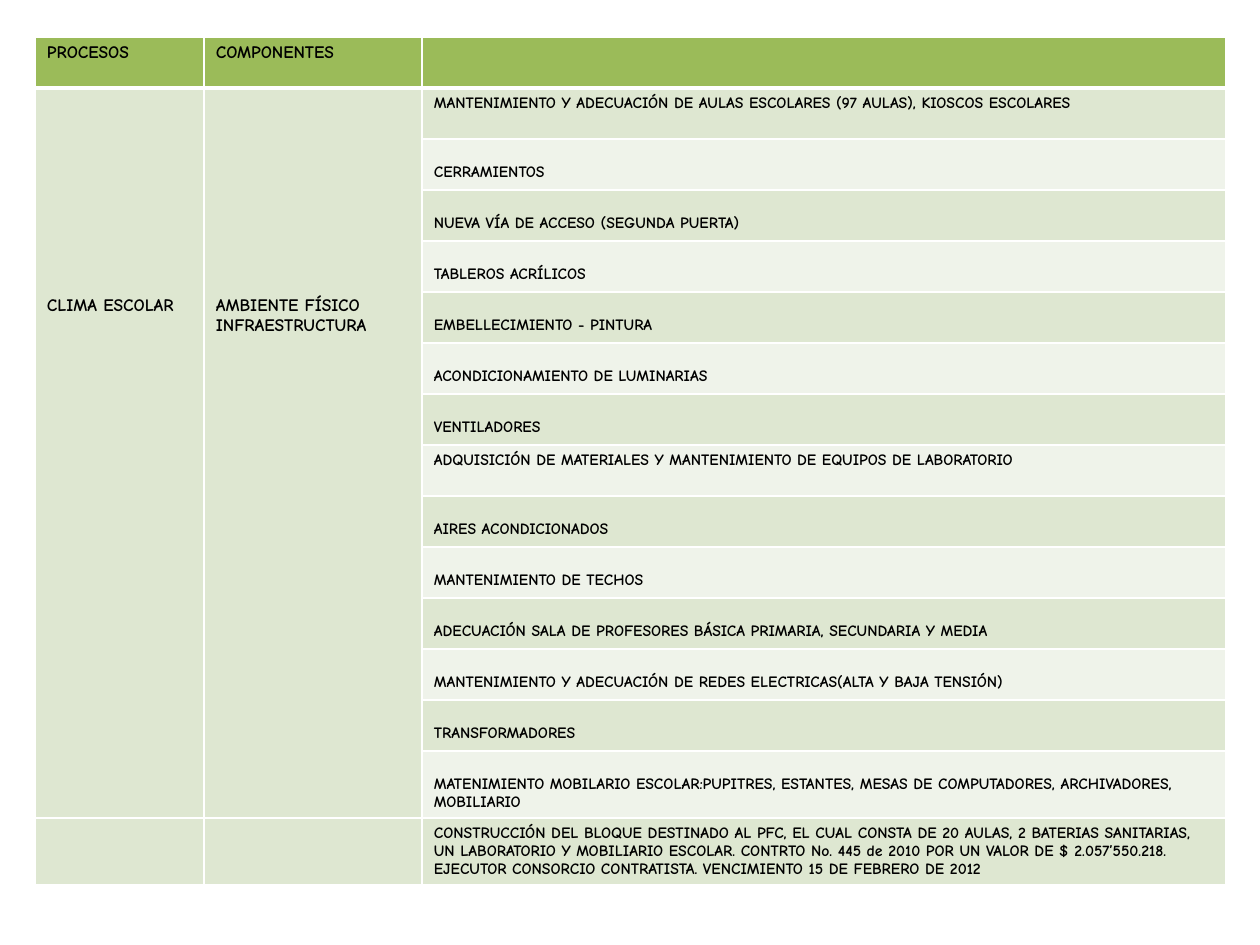
from itertools import cycle

from lxml.etree import SubElement
from pptx import Presentation
from pptx.dml.color import RGBColor
from pptx.oxml.ns import qn
from pptx.util import Emu, Pt

EMU_PER_PX = 914400 // 126
HEADER_GREEN = RGBColor(0x9B, 0xBB, 0x59)
BAND_GREEN = RGBColor(0xDE, 0xE7, 0xD1)
BAND_PALE = RGBColor(0xEF, 0xF3, 0xEA)
BLACK = RGBColor(0, 0, 0)
WHITE = RGBColor(0xFF, 0xFF, 0xFF)

LEFT, TOP = 35, 37
COLUMN_WIDTHS = [169, 218, 804]
ROW_HEIGHTS = [51] * 14 + [67] * 2
MARGIN_TOP, LOWERED_TOP, GROUP_TOP = 6, 24, 208

HEADERS = ["PROCESOS", "COMPONENTES", ""]
GROUPS = ["CLIMA ESCOLAR", "AMBIENTE FÍSICO\nINFRAESTRUCTURA"]
LAST_GROUP_ROW = 14
ACTIONS = [
    "MANTENIMIENTO Y ADECUACIÓN DE AULAS ESCOLARES (97 AULAS), KIOSCOS ESCOLARES",
    "CERRAMIENTOS",
    "NUEVA VÍA DE ACCESO (SEGUNDA PUERTA)",
    "TABLEROS ACRÍLICOS",
    "EMBELLECIMIENTO - PINTURA",
    "ACONDICIONAMIENTO DE LUMINARIAS",
    "VENTILADORES",
    "ADQUISICIÓN DE MATERIALES Y MANTENIMIENTO DE EQUIPOS DE LABORATORIO",
    "AIRES ACONDICIONADOS",
    "MANTENIMIENTO DE TECHOS",
    "ADECUACIÓN SALA DE PROFESORES BÁSICA PRIMARIA, SECUNDARIA Y MEDIA",
    "MANTENIMIENTO Y ADECUACIÓN DE REDES ELECTRICAS(ALTA Y BAJA TENSIÓN)",
    "TRANSFORMADORES",
    "MATENIMIENTO MOBILARIO ESCOLAR:PUPITRES, ESTANTES, MESAS DE COMPUTADORES, "
    "ARCHIVADORES, MOBILIARIO",
    "CONSTRUCCIÓN DEL BLOQUE DESTINADO AL PFC, EL CUAL CONSTA DE 20 AULAS, "
    "2 BATERIAS SANITARIAS, UN LABORATORIO Y MOBILIARIO ESCOLAR. CONTRTO No. 445 "
    "de 2010 POR UN VALOR DE $ 2.057’550.218. EJECUTOR CONSORCIO CONTRATISTA. "
    "VENCIMIENTO 15 DE FEBRERO DE 2012",
]
TOP_ALIGNED_ROWS = {1, 8, 15}


def px(length):
    return Emu(length * EMU_PER_PX)


class SlideBuilder:
    font_name = "Comic Neue"

    def __init__(self, presentation):
        self.slide = presentation.slides.add_slide(presentation.slide_layouts[6])

    def table(self, left, top, widths, heights):
        frame = self.slide.shapes.add_table(
            len(heights), len(widths), px(left), px(top), px(sum(widths)), px(sum(heights))
        )
        table = frame.table
        for column, width in zip(table.columns, widths):
            column.width = px(width)
        for row, height in zip(table.rows, heights):
            row.height = px(height)
        return table

    def borders(self, cell, bottom_width=1):
        properties = cell._tc.get_or_add_tcPr()
        for index, side in enumerate(("lnL", "lnR", "lnT", "lnB")):
            width = bottom_width if side == "lnB" else 1
            line = SubElement(properties, qn(f"a:{side}"), w=str(Pt(width)))
            fill = SubElement(line, qn("a:solidFill"))
            SubElement(fill, qn("a:srgbClr"), val=str(WHITE))
            properties.insert(index, line)

    def cell(self, cell, fill, text="", size=10, margin_top=MARGIN_TOP, bottom_width=1):
        cell.fill.solid()
        cell.fill.fore_color.rgb = fill
        self.borders(cell, bottom_width)
        cell.margin_left = cell.margin_right = px(12)
        cell.margin_top = px(margin_top)
        cell.margin_bottom = px(MARGIN_TOP)
        cell.text_frame.text = text
        for paragraph in cell.text_frame.paragraphs:
            for run in paragraph.runs:
                run.font.name = self.font_name
                run.font.size = Pt(size)
                run.font.bold = True
                run.font.color.rgb = BLACK


def main():
    presentation = Presentation()
    presentation.slide_width, presentation.slide_height = px(1260), px(945)
    builder = SlideBuilder(presentation)
    table = builder.table(LEFT, TOP, COLUMN_WIDTHS, ROW_HEIGHTS)

    for column, header in enumerate(HEADERS):
        builder.cell(table.cell(0, column), HEADER_GREEN, header, bottom_width=3)

    bands = cycle((BAND_GREEN, BAND_PALE))
    for row, (action, band) in enumerate(zip(ACTIONS, bands), start=1):
        margin_top = MARGIN_TOP if row in TOP_ALIGNED_ROWS else LOWERED_TOP
        builder.cell(table.cell(row, 2), band, action, 9, margin_top)
        for column in range(len(GROUPS)):
            builder.cell(table.cell(row, column), BAND_GREEN)

    for column, group in enumerate(GROUPS):
        first = table.cell(1, column)
        first.merge(table.cell(LAST_GROUP_ROW, column))
        builder.cell(first, BAND_GREEN, group, margin_top=GROUP_TOP)

    presentation.save("out.pptx")


if __name__ == "__main__":
    main()
